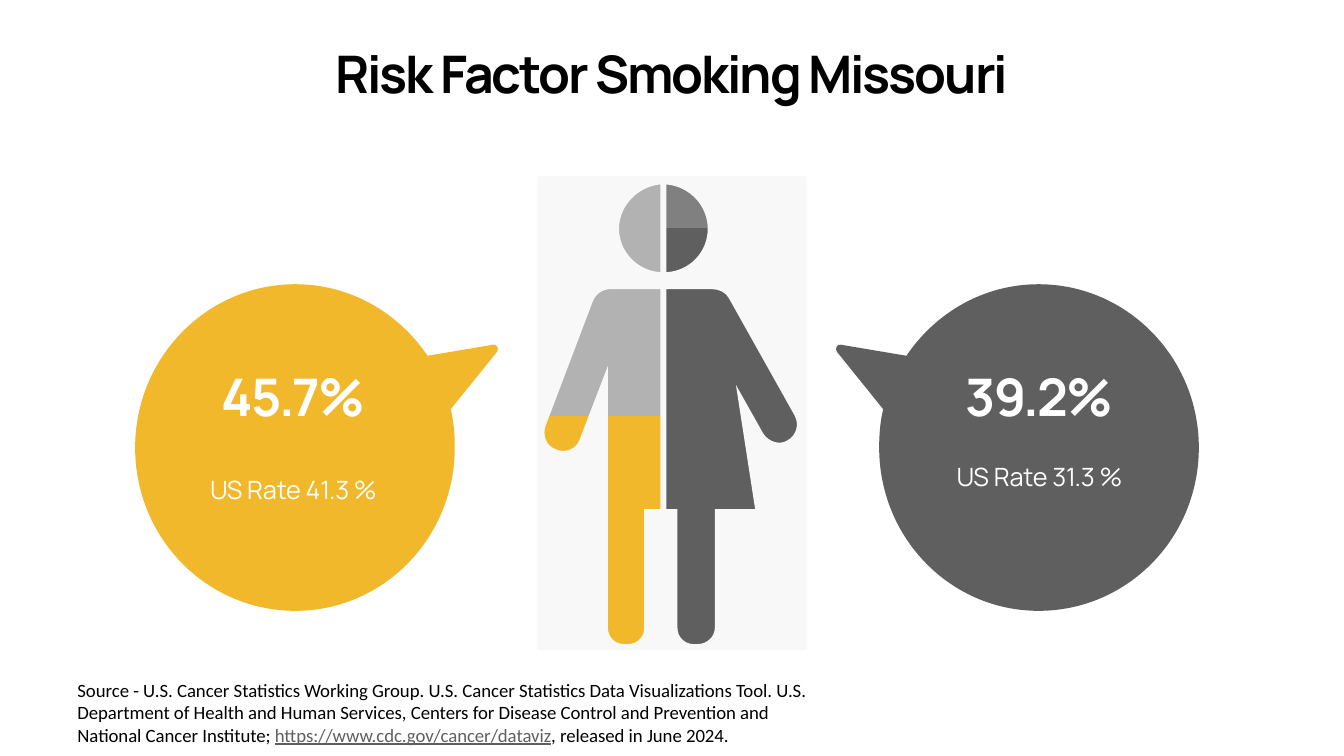
"""Build the slide on smoking as a risk factor in Missouri."""
import pptx
import pptx.chart.data
import pptx.dml.color
import pptx.enum.chart
import pptx.enum.text
import pptx.oxml.ns
import pptx.util
from lxml import etree

RGB = pptx.dml.color.RGBColor
ALIGN = pptx.enum.text.PP_ALIGN
ANCHOR = pptx.enum.text.MSO_ANCHOR
BLACK, WHITE = RGB(0, 0, 0), RGB(255, 255, 255)
YELLOW, DARK = RGB(0xF1, 0xB8, 0x2C), RGB(0x5F, 0x5F, 0x5F)
MID, LIGHT, PANEL = RGB(0x80, 0x80, 0x80), RGB(0xB2, 0xB2, 0xB2), RGB(0xF8, 0xF8, 0xF8)

WIDTH, HEIGHT = 13.33, 7.5
TITLE = "Risk Factor Smoking Missouri"
SOURCE = [
    ("Source - U.S. Cancer Statistics Working Group. U.S. Cancer Statistics Data "
     "Visualizations Tool. U.S. Department of Health and Human Services, Centers for "
     "Disease Control and Prevention and National Cancer Institute; ", BLACK, False),
    ("https://www.cdc.gov/cancer/dataviz", DARK, True),
    (", released in June 2024.", BLACK, False),
]
CALLOUTS = [
    dict(rate="39.2%", us="US Rate 31.3 %", left=9.29, us_top=4.58, color=DARK, mirror=True),
    dict(rate="45.7%", us="US Rate 41.3 %", left=1.89, us_top=4.71, color=YELLOW, mirror=False),
]
FILLS = [
    dict(left=5.37, width=1.21, parts=[("Series 1", 50, YELLOW), ("Series 2", 50, LIGHT)]),
    dict(left=6.58, width=1.35, parts=[("Series 1", 90, DARK), ("Series 2", 10, MID)]),
]
MIRROR_SUM = 13.23
BUBBLE = [
    (2.93, 2.82), (3.47, 2.82, 3.95, 3.1, 4.24, 3.53), (4.89, 3.42),
    (4.93, 3.41, 4.95, 3.46, 4.93, 3.49), (4.47, 4.06),
    (4.5, 4.18, 4.51, 4.31, 4.51, 4.44), (4.51, 5.34, 3.8, 6.06, 2.93, 6.06),
    (2.05, 6.06, 1.34, 5.34, 1.34, 4.44), (1.34, 3.55, 2.05, 2.82, 2.93, 2.82),
]
MAN = [
    (6.09, 2.87), (6.08, 2.87, 6.08, 2.87, 6.08, 2.87), (5.99, 2.86, 5.91, 2.91, 5.88, 2.99),
    (5.41, 4.23), (5.38, 4.32, 5.42, 4.43, 5.52, 4.46), (5.61, 4.5, 5.72, 4.45, 5.75, 4.36),
    (6.03, 3.63), (6.03, 4.5, 6.03, 5.36, 6.03, 6.23), (6.03, 6.32, 6.1, 6.39, 6.19, 6.39),
    (6.23, 6.39), (6.32, 6.39, 6.39, 6.32, 6.39, 6.23), (6.39, 5.05), (6.55, 5.05),
    (6.55, 4.33, 6.55, 3.6, 6.55, 2.87),
]
WOMAN = [
    (6.61, 2.87), (6.61, 5.05), (6.66, 5.05), (6.72, 5.05), (6.72, 6.23),
    (6.72, 6.32, 6.79, 6.39, 6.88, 6.39), (6.92, 6.39), (7.01, 6.39, 7.09, 6.32, 7.09, 6.23),
    (7.09, 5.05), (7.49, 5.05), (7.3, 3.82), (7.57, 4.3),
    (7.62, 4.38, 7.73, 4.42, 7.81, 4.37), (7.9, 4.32, 7.93, 4.21, 7.88, 4.12),
    (7.23, 2.96), (7.2, 2.9, 7.13, 2.87, 7.07, 2.87), (6.66, 2.87),
]
HEAD_LEFT = [(6.55, 1.83), (6.33, 1.85, 6.14, 2.04, 6.14, 2.27),
             (6.14, 2.5, 6.33, 2.69, 6.55, 2.7)]
HEAD_RIGHT = [(6.61, 1.83), (6.61, 2.7), (6.84, 2.69, 7.02, 2.5, 7.02, 2.27),
              (7.02, 2.04, 6.84, 1.85, 6.61, 1.83)]
FRAME = [(5.33, 1.75), (8, 1.75), (8, 6.45), (5.33, 6.45)]
UNITS = 1000


def inches(*values):
    return [pptx.util.Inches(v) for v in values]


def to_points(segment, mirror):
    """Pair up a segment's numbers as points in outline units."""
    return [(round((MIRROR_SUM - x if mirror else x) * UNITS), round(y * UNITS))
            for x, y in zip(segment[::2], segment[1::2])]


def add_outline(slide, contours, color, mirror=False):
    """Draw closed contours as one shape, bending lines into Bezier curves."""
    shaped = [[to_points(seg, mirror) for seg in contour] for contour in contours]
    builder = slide.shapes.build_freeform(*shaped[0][0][-1], scale=914400 / UNITS)
    for i, contour in enumerate(shaped):
        if i:
            builder.move_to(*contour[0][-1])
        builder.add_line_segments([seg[-1] for seg in contour[1:]], close=True)
    sp = builder.convert_to_shape()
    sp.shadow.inherit = False
    sp.fill.solid()
    sp.fill.fore_color.rgb = color
    sp.line.fill.background()

    ends = [seg[-1] for contour in shaped for seg in contour]
    left, top = min(x for x, _ in ends), min(y for _, y in ends)
    qn = pptx.oxml.ns.qn
    lines = list(sp._element.iter(qn("a:lnTo")))
    segments = [seg for contour in shaped for seg in contour[1:]]
    for line, seg in zip(lines, segments):
        if len(seg) == 3:
            curve = etree.Element(qn("a:cubicBezTo"))
            for x, y in seg:
                etree.SubElement(curve, qn("a:pt"), x=str(x - left), y=str(y - top))
            line.getparent().replace(line, curve)


def add_run(p, text, size, color, font="Manrope", bold=False, spacing=0, underline=False):
    r = p.add_run()
    r.text = text
    r.font.size, r.font.name, r.font.bold = pptx.util.Pt(size), font, bold
    r.font.color.rgb = color
    r.font.underline = underline
    if spacing:
        r.font._element.set("spc", str(spacing))


def format_frame(sp, anchor, align):
    tf = sp.text_frame
    tf.word_wrap = True
    tf.auto_size = pptx.enum.text.MSO_AUTO_SIZE.NONE
    tf.vertical_anchor = anchor
    tf.margin_left, tf.margin_right, tf.margin_top, tf.margin_bottom = inches(0.1, 0.1, 0.05, 0.05)
    p = tf.paragraphs[0]
    p.alignment = align
    return p


def add_text(slide, box, anchor=ANCHOR.TOP, align=ALIGN.CENTER):
    return format_frame(slide.shapes.add_textbox(*inches(*box)), anchor, align)


def add_fill_chart(slide, left, width, parts):
    data = pptx.chart.data.CategoryChartData()
    data.categories = ["1"]
    for name, value, _ in parts:
        data.add_series(name, [value])
    kind = pptx.enum.chart.XL_CHART_TYPE.COLUMN_STACKED_100
    chart = slide.shapes.add_chart(kind, *inches(left, 1.8, width, 4.65), data).chart
    chart.has_legend = chart.has_title = False
    chart.font.name, chart.font.size, chart.font.bold = "Manrope", pptx.util.Pt(34), True
    chart.font.color.rgb = WHITE
    chart.category_axis.visible = chart.value_axis.visible = False
    chart.value_axis.has_major_gridlines = False
    chart.value_axis.minimum_scale, chart.value_axis.maximum_scale = 0, 1
    plot = chart.plots[0]
    plot.gap_width, plot.overlap, plot.vary_by_categories = 0, 100, False
    for series, (_, _, color) in zip(plot.series, parts):
        series.format.fill.solid()
        series.format.fill.fore_color.rgb = color
    area = chart._chartSpace.chart.plotArea
    qn = pptx.oxml.ns.qn
    for old in area.findall(qn("c:layout")):
        area.remove(old)
    layout = etree.Element(qn("c:layout"))
    manual = etree.SubElement(layout, qn("c:manualLayout"))
    for tag, val in (("layoutTarget", "inner"), ("xMode", "edge"), ("yMode", "edge"),
                     ("x", "0"), ("y", "0"), ("w", "1"), ("h", "1")):
        etree.SubElement(manual, qn(f"c:{tag}")).set("val", val)
    area.insert(0, layout)


def main():
    prs = pptx.Presentation()
    prs.slide_width, prs.slide_height = inches(WIDTH, HEIGHT)
    slide = prs.slides.add_slide(prs.slide_layouts[5])
    for c in CALLOUTS:
        add_outline(slide, [BUBBLE], c["color"], c["mirror"])

    title = slide.shapes.title
    title.left, title.top, title.width, title.height = inches(0.83, 0.36, 11.67, 0.72)
    p = format_frame(title, ANCHOR.BOTTOM, ALIGN.CENTER)
    add_run(p, TITLE, 37, BLACK, bold=True, spacing=-145)

    for c in reversed(CALLOUTS):
        p = add_text(slide, (c["left"], c["us_top"], 2.04, 0.36))
        p.line_spacing = pptx.util.Pt(18)
        add_run(p, c["us"], 18, WHITE, spacing=-10)
        p = add_text(slide, (c["left"], 3.56, 2.04, 0.72), ANCHOR.BOTTOM)
        add_run(p, c["rate"], 37, WHITE, bold=True, spacing=-145)

    for fill in FILLS:
        add_fill_chart(slide, **fill)
    add_outline(slide, [MAN, WOMAN, HEAD_LEFT, HEAD_RIGHT, FRAME], PANEL)

    p = add_text(slide, (0.67, 6.73, 7.54, 0.67), ANCHOR.MIDDLE, ALIGN.LEFT)
    for text, color, underline in SOURCE:
        add_run(p, text, 13.33, color, font="Calibri", underline=underline)
    prs.save("out.pptx")


if __name__ == "__main__":
    main()
